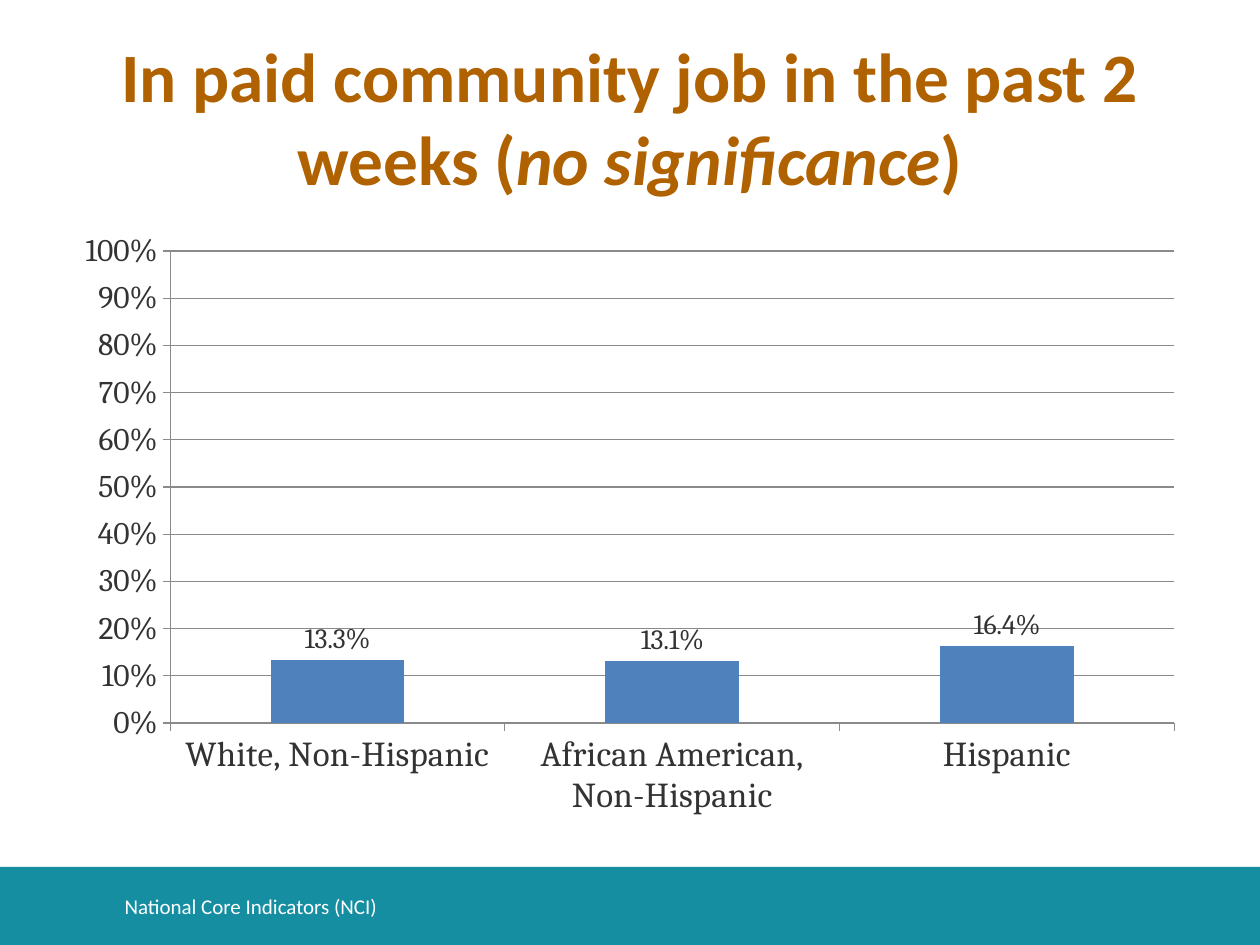
"""Build a slide charting paid community jobs by race and ethnicity."""
from pptx import Presentation
from pptx import util as u
from pptx.chart.data import CategoryChartData
from pptx.dml.color import RGBColor
from pptx.enum import chart as ch, shapes, text


def paint(fmt, color):
    fmt.solid()
    fmt.fore_color.rgb = RGBColor.from_string(color)


def style(font, size, color, name="Calibri"):
    font.size, font.name = u.Pt(size), name
    font.color.rgb = RGBColor.from_string(color)


prs = Presentation()
prs.slide_width, prs.slide_height = u.Inches(10), u.Inches(7.5)
W, H = prs.slide_width, prs.slide_height
margin = int(W * 0.05)
band_h = u.Inches(0.62)
s = prs.slides.add_slide(prs.slide_layouts[5])

band = s.shapes.add_shape(shapes.MSO_SHAPE.RECTANGLE, 0, H - band_h, W, band_h)
band.shadow.inherit = False
paint(band.fill, "168EA2")
band.line.fill.background()

title = s.shapes.title
title.left, title.top = margin, int(H * 0.04)
title.width, title.height = W - 2 * margin, u.Inches(1.25)
tf = title.text_frame
tf.auto_size = text.MSO_AUTO_SIZE.NONE
tf.vertical_anchor = text.MSO_ANCHOR.MIDDLE
p = tf.paragraphs[0]
p.alignment = text.PP_ALIGN.CENTER
style(p.font, 39.6, "B06100")
p.font.bold = True
for words, italic in (("In paid community job in the past 2 weeks (", False),
                      ("no significance", True), (")", False)):
    r = p.add_run()
    r.text, r.font.italic = words, italic

footer = s.shapes.add_textbox(u.Inches(0.89), u.Inches(6.99), u.Inches(7.4), u.Inches(0.4))
tf = footer.text_frame
tf.word_wrap = True
tf.vertical_anchor = text.MSO_ANCHOR.MIDDLE
p = tf.paragraphs[0]
p.text = "National Core Indicators (NCI)"
style(p.font, 12, "FFFFFF")

data = CategoryChartData(number_format="0.0%")
data.categories = ["White, Non-Hispanic", "African American, Non-Hispanic", "Hispanic"]
data.add_series("Series 1", (0.133, 0.131, 0.164))
chart = s.shapes.add_chart(ch.XL_CHART_TYPE.COLUMN_CLUSTERED, margin, u.Inches(1.75),
                           W - 2 * margin, u.Inches(4.83), data).chart
chart.has_legend = chart.has_title = False
style(chart.font, 10, "333333", "Cambria")

for axis, size in ((chart.category_axis, 20), (chart.value_axis, 18)):
    axis.major_tick_mark = ch.XL_TICK_MARK.OUTSIDE
    style(axis.tick_labels.font, size, "333333", "Cambria")
    paint(axis.format.line.fill, "8A8A8A")
    axis.format.line.width = u.Pt(0.75)
axis = chart.value_axis
axis.minimum_scale, axis.maximum_scale, axis.major_unit = 0, 1, 0.1
axis.tick_labels.number_format = "0%"
axis.tick_labels.number_format_is_linked = False
axis.has_major_gridlines = True
paint(axis.major_gridlines.format.line.fill, "8A8A8A")
axis.major_gridlines.format.line.width = u.Pt(0.75)

plot = chart.plots[0]
plot.gap_width, plot.vary_by_categories = 150, False
paint(plot.series[0].format.fill, "4F81BD")
labels = plot.series[0].data_labels
labels.show_value = True
labels.number_format, labels.number_format_is_linked = "0.0%", False
labels.position = ch.XL_LABEL_POSITION.OUTSIDE_END
style(labels.font, 16, "333333", "Cambria")

prs.save("out.pptx")
